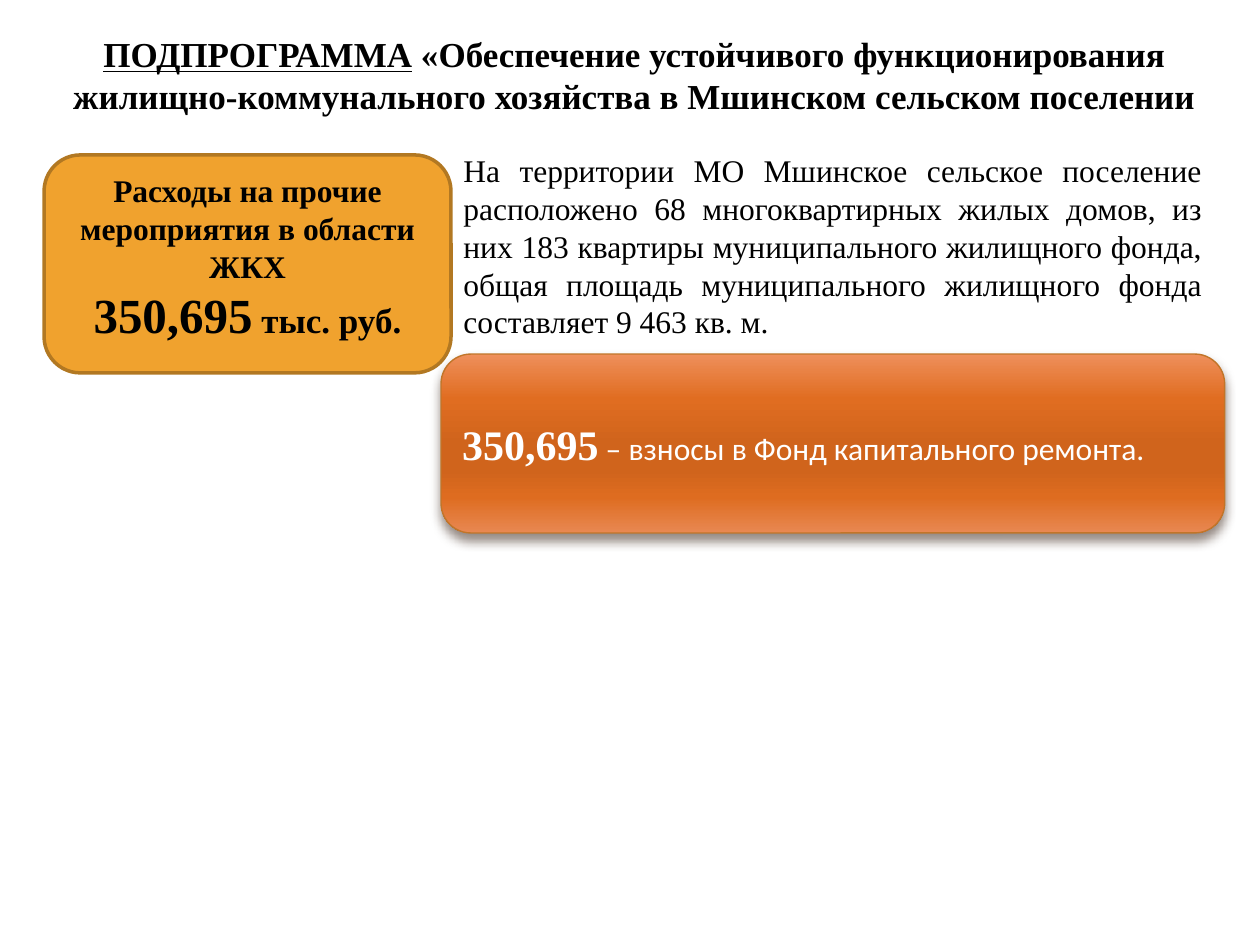
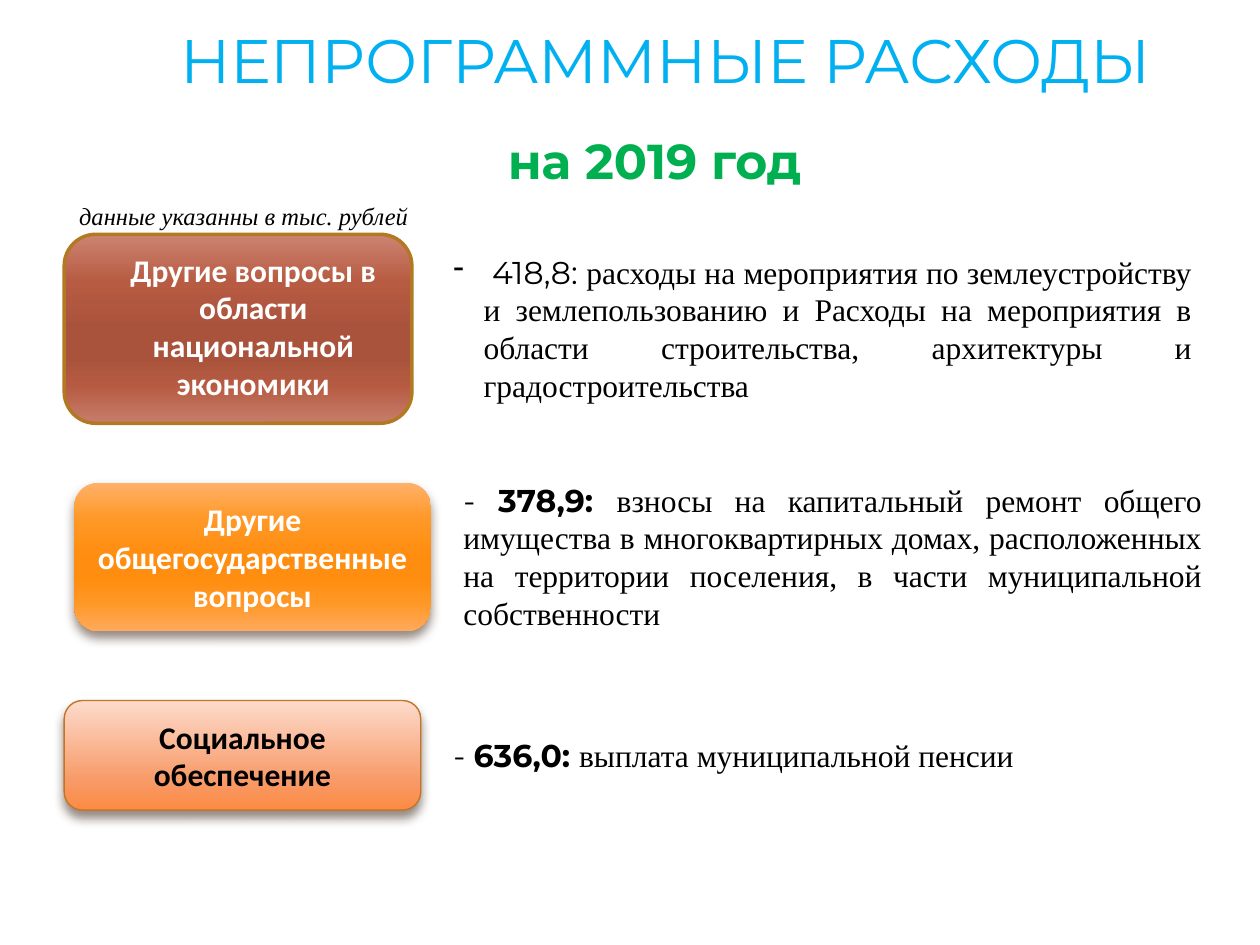
from lxml import etree
from pptx import Presentation
from pptx.dml.color import RGBColor
from pptx.enum import shapes, text
from pptx.oxml import parse_xml
from pptx.oxml.ns import nsdecls, qn
from pptx.util import Inches, Pt

COLORS = {
    "black": "000000", "white": "FFFFFF", "blue": "00B0F0", "green": "00B050",
    "gold": "F0A22E", "gold_line": "B27822", "rust_line": "C17529", "shadow": "4E3B30",
}
# Gradient stops: position in percent, colour
GRADIENTS = {
    "orange": [(0, "EE8F5B"), (25, "E06D21"), (50, "D0641C"), (65, "D0641C"), (80, "DE6C20"), (100, "E88852")],
    "brown": [(0, "CD8472"), (25, "B75B42"), (50, "AA533C"), (65, "AA533C"), (80, "B65B42"), (100, "C77D6B")],
    "amber": [(0, "FFB16A"), (25, "FF9826"), (50, "FF8D0F"), (65, "FF8D0F"), (80, "FF9724"), (100, "FFAA5C")],
    "peach": [(0, "FDDBCC"), (72, "F89B69"), (100, "FC8A43")],
}
SERIF, SANS, DISPLAY = "Times New Roman", "Calibri", "Montserrat"
CENTER, JUSTIFY, RIGHT = text.PP_ALIGN.CENTER, text.PP_ALIGN.JUSTIFY, text.PP_ALIGN.RIGHT
THICK, THIN = ("gold_line", 2), ("rust_line", 0.79)


def rgb(name):
    return RGBColor.from_string(COLORS[name])


def run(words, size=18, font=SERIF, color="black", **style):
    return words, size, font, color, style


def write(tf, paragraphs, align):
    """Fill a text frame; each paragraph is a list of runs."""
    tf.word_wrap = True
    for i, runs in enumerate(paragraphs):
        p = tf.add_paragraph() if i else tf.paragraphs[0]
        p.alignment = align
        for words, size, font, color, style in runs:
            r = p.add_run()
            r.text = words
            r.font.size, r.font.name = Pt(size), font
            r.font.color.rgb = rgb(color)
            for key, value in style.items():
                setattr(r.font, key, value)


def add_text(s, box, paragraphs, align):
    tf = s.shapes.add_textbox(*map(Inches, box)).text_frame
    write(tf, paragraphs, align)
    return tf


def add_bullet(p, char, indent):
    pPr = p._p.get_or_add_pPr()
    pPr.set("marL", str(Inches(indent)))
    pPr.set("indent", str(-Inches(indent)))
    etree.SubElement(pPr, qn("a:buChar")).set("char", char)


def set_gradient(sp, stops):
    gs = "".join(f'<a:gs pos="{pos * 1000}"><a:srgbClr val="{c}"/></a:gs>' for pos, c in stops)
    sp._element.spPr.find(qn("a:prstGeom")).addnext(parse_xml(
        f'<a:gradFill {nsdecls("a")} rotWithShape="1"><a:gsLst>{gs}</a:gsLst>'
        '<a:lin ang="5400000" scaled="0"/></a:gradFill>'))


def set_shadow(sp):
    effects = sp._element.spPr.find(qn("a:effectLst"))
    effects.append(parse_xml(
        f'<a:outerShdw {nsdecls("a")} blurRad="{Pt(6)}" dist="{Pt(4)}" dir="5400000" rotWithShape="0">'
        f'<a:srgbClr val="{COLORS["shadow"]}"><a:alpha val="60000"/></a:srgbClr></a:outerShdw>'))


def add_card(s, box, fill, line=None, shadow=False, runs=None, align=CENTER):
    sp = s.shapes.add_shape(shapes.MSO_SHAPE.ROUNDED_RECTANGLE, *map(Inches, box))
    sp.shadow.inherit = False
    if fill in GRADIENTS:
        set_gradient(sp, GRADIENTS[fill])
    else:
        sp.fill.solid()
        sp.fill.fore_color.rgb = rgb(fill)
    if line:
        sp.line.color.rgb, sp.line.width = rgb(line[0]), Pt(line[1])
    else:
        sp.line.fill.background()
    if shadow:
        set_shadow(sp)
    if runs:
        sp.text_frame.vertical_anchor = text.MSO_ANCHOR.MIDDLE
        write(sp.text_frame, [runs], align)


def add_note(s, card, height, runs):
    """Explanation to the right of a card, centred on its height."""
    x, y, w, h = card
    return add_text(s, (x + 2.99, y + (h - height) / 2, 6.06, height), [runs], JUSTIFY)


def housing_total(s, box):
    x, y, w, h = box
    add_card(s, box, "gold", THICK)
    add_text(s, (x + 0.08, y + 0.08, w - 0.16, h - 0.25), [
        [run("Расходы на прочие мероприятия в области ЖКХ", bold=True)],
        [run("350,695", 28, bold=True), run(" тыс. руб.", 20, bold=True)],
    ], CENTER)


def housing_slide(prs):
    s = prs.slides.add_slide(prs.slide_layouts[6])
    # Heading
    add_text(s, (0.27, 0.21, 9.53, 0.77), [[
        run("ПОДПРОГРАММА", 20, bold=True, underline=True),
        run(" «Обеспечение устойчивого функционирования жилищно-коммунального хозяйства "
            "в Мшинском сельском поселении", 20, bold=True),
    ]], CENTER)
    # Total and housing stock
    housing_total(s, (0.35, 1.23, 3.23, 1.73))
    add_text(s, (3.58, 1.15, 6.06, 1.62), [[run(
        "На территории МО Мшинское сельское поселение расположено 68 многоквартирных жилых домов, "
        "из них 183 квартиры муниципального жилищного фонда, общая площадь муниципального "
        "жилищного фонда составляет 9 463 кв. м.")]], JUSTIFY)
    # Contribution
    add_card(s, (3.5, 2.81, 6.22, 1.42), "orange", THIN, True, [
        run("350,695", 24, color="white", bold=True),
        run(" – взносы в Фонд капитального ремонта.", font=SANS, color="white"),
    ], JUSTIFY)


def economy_row(s, box):
    x, y, w, h = box
    add_card(s, box, "brown", THICK)
    tf = add_note(s, box, 1.31, [
        run(" 418,8: ", font=DISPLAY),
        run("расходы на мероприятия по землеустройству и землепользованию и Расходы на мероприятия "
            "в области строительства, архитектуры и градостроительства"),
    ])
    add_bullet(tf.paragraphs[0], "-", 0.24)
    add_text(s, (x + 0.24, y + 0.08, w - 0.24, 1.31), [[
        run("Другие вопросы в области национальной экономики", font=SANS, color="white", bold=True)]], CENTER)


def expense_row(s, box, name, color, fill, line, amount, purpose, height):
    add_card(s, box, fill, line, True, [run(name, font=SANS, color=color, bold=True)])
    add_note(s, box, height, [
        run("- ", font=DISPLAY), run(amount + ": ", font=DISPLAY, bold=True), run(purpose)])


def other_expenses_slide(prs):
    s = prs.slides.add_slide(prs.slide_layouts[6])
    # Heading, year and unit
    add_text(s, (0.91, 0.13, 8.74, 0.94), [[
        run("НЕПРОГРАММНЫЕ РАСХОДЫ", 35.1, DISPLAY, "blue")]], CENTER)
    add_text(s, (0.98, 0.99, 8.43, 0.57), [[
        run("на 2019 год", 28, DISPLAY, "green", bold=True)]], CENTER)
    add_text(s, (0.35, 1.55, 2.99, 0.34), [[
        run("данные указанны в тыс. рублей", 14, italic=True)]], RIGHT)
    # Expense rows
    economy_row(s, (0.51, 1.86, 2.76, 1.5))
    expense_row(s, (0.59, 3.83, 2.83, 1.18), "Другие общегосударственные вопросы", "white", "amber", None,
                "378,9", "взносы на капитальный ремонт общего имущества в многоквартирных домах, "
                "расположенных на территории поселения, в части муниципальной собственности", 1.31)
    expense_row(s, (0.51, 5.56, 2.83, 0.87), "Социальное обеспечение", "black", "peach", THIN,
                "636,0", "выплата муниципальной пенсии", 0.4)


def main():
    prs = Presentation()
    prs.slide_width, prs.slide_height = Inches(10), Inches(7.5)
    housing_slide(prs)
    other_expenses_slide(prs)
    prs.save("out.pptx")


if __name__ == "__main__":
    main()
